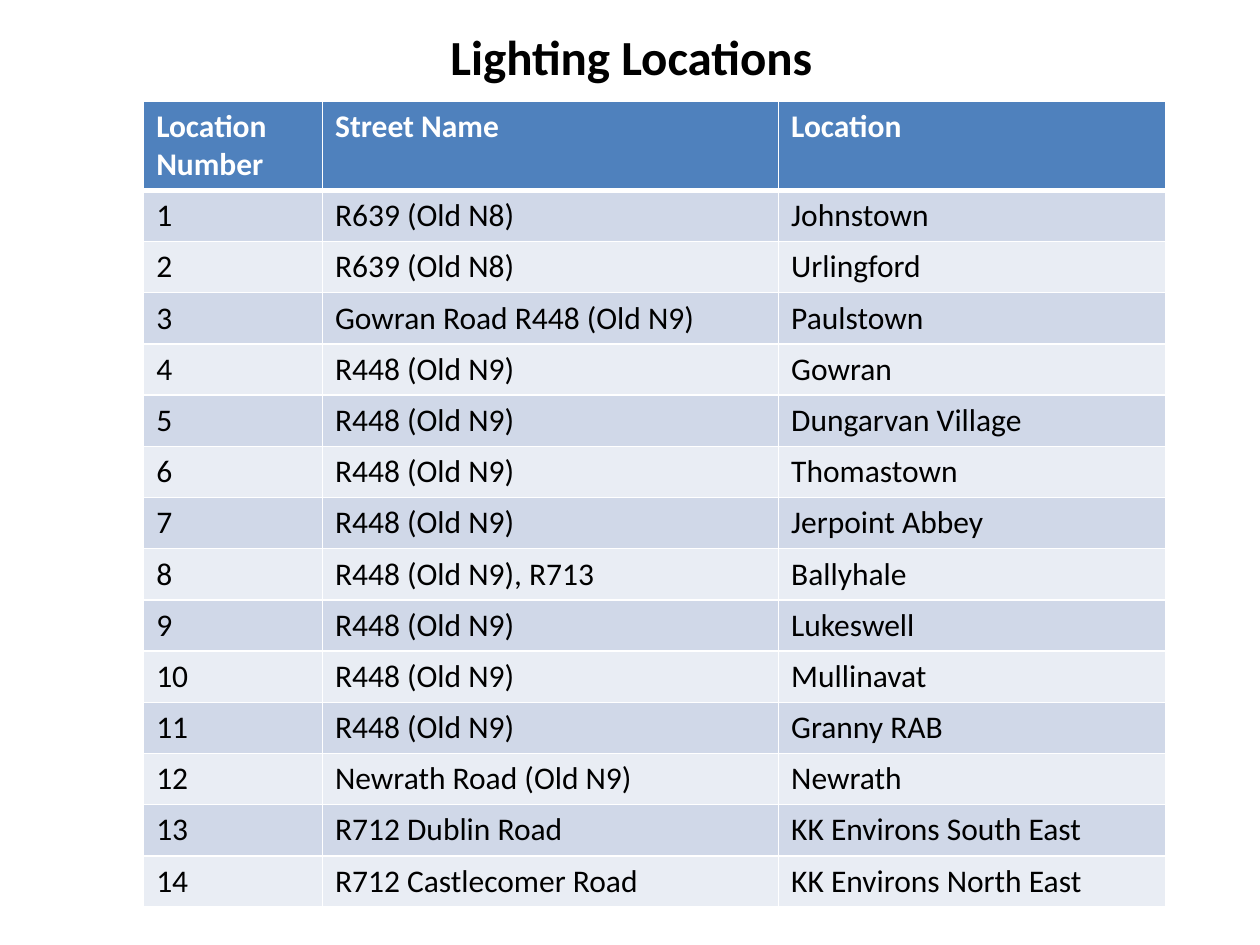
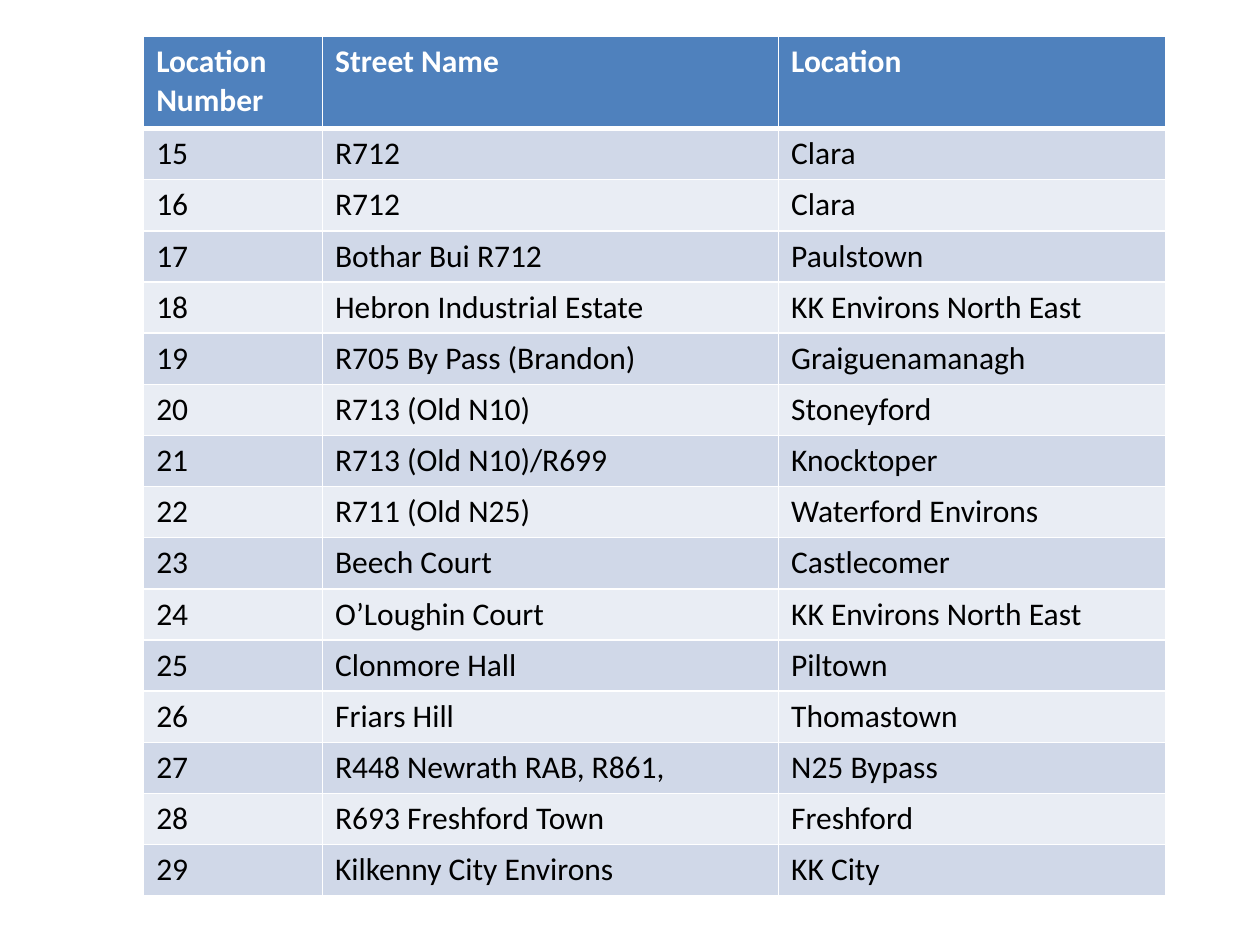
from lxml import etree
from pptx import Presentation
from pptx.dml.color import RGBColor
from pptx.enum import text
from pptx.oxml.ns import qn
from pptx.util import Inches, Pt

COLORS = {
    "header": "4F81BD",
    "odd": "D0D8E8",
    "even": "E9EDF4",
    "white": "FFFFFF",
    "black": "000000",
}
FONT = "Calibri"
HEADINGS = ("Location Number", "Street Name", "Location")
COLUMN_WIDTHS = (1.42, 3.62, 3.07)
TABLE_LEFT = 1.14
OLD_N9 = "R448 (Old N9)"

FIRST_LOCATIONS = [
    ("R639 (Old N8)", "Johnstown"),
    ("R639 (Old N8)", "Urlingford"),
    ("Gowran Road R448 (Old N9)", "Paulstown"),
    (OLD_N9, "Gowran"),
    (OLD_N9, "Dungarvan Village"),
    (OLD_N9, "Thomastown"),
    (OLD_N9, "Jerpoint Abbey"),
    ("R448 (Old N9), R713", "Ballyhale"),
    (OLD_N9, "Lukeswell"),
    (OLD_N9, "Mullinavat"),
    (OLD_N9, "Granny RAB"),
    ("Newrath Road (Old N9)", "Newrath"),
    ("R712 Dublin Road", "KK Environs South East"),
    ("R712 Castlecomer Road", "KK Environs North East"),
]
MORE_LOCATIONS = [
    ("R712", "Clara"),
    ("R712", "Clara"),
    ("Bothar Bui R712", "Paulstown"),
    ("Hebron Industrial Estate", "KK Environs North East"),
    ("R705 By Pass (Brandon)", "Graiguenamanagh"),
    ("R713 (Old N10)", "Stoneyford"),
    ("R713 (Old N10)/R699", "Knocktoper"),
    ("R711 (Old N25)", "Waterford Environs"),
    ("Beech Court", "Castlecomer"),
    ("O’Loughin Court", "KK Environs North East"),
    ("Clonmore Hall", "Piltown"),
    ("Friars Hill", "Thomastown"),
    ("R448 Newrath RAB, R861,", "N25 Bypass"),
    ("R693 Freshford Town", "Freshford"),
    ("Kilkenny City Environs", "KK City"),
]


def color(name):
    return RGBColor.from_string(COLORS[name])


def style_paragraph(para, size, color_name, bold):
    para.font.name = FONT
    para.font.size = Pt(size)
    para.font.bold = bold
    para.font.color.rgb = color(color_name)


def add_title(page, wording, left, top, width, height):
    title = page.shapes.title
    title.left, title.top = Inches(left), Inches(top)
    title.width, title.height = Inches(width), Inches(height)
    frame = title.text_frame
    frame.text = wording
    frame.vertical_anchor = text.MSO_ANCHOR.MIDDLE
    para = frame.paragraphs[0]
    para.alignment = text.PP_ALIGN.CENTER
    style_paragraph(para, 28, "black", True)


def set_borders(cell, row):
    points = {"L": 1, "R": 1, "T": 3 if row == 1 else 1, "B": 3 if row == 0 else 1}
    properties = cell._tc.get_or_add_tcPr()
    for side, width in points.items():
        line = etree.SubElement(properties, qn(f"a:ln{side}"), w=str(Pt(width)))
        fill = etree.SubElement(line, qn("a:solidFill"))
        etree.SubElement(fill, qn("a:srgbClr"), val=COLORS["white"])


def fill_cell(cell, row, wording):
    set_borders(cell, row)
    cell.fill.solid()
    is_header = row == 0
    shade = "header" if is_header else "odd" if row % 2 else "even"
    cell.fill.fore_color.rgb = color(shade)
    cell.text = wording
    ink = "white" if is_header else "black"
    style_paragraph(cell.text_frame.paragraphs[0], 18, ink, is_header)


def add_location_table(page, locations, first_number, top, height, header_height):
    numbered = [(str(number), *location)
                for number, location in enumerate(locations, first_number)]
    rows = [HEADINGS] + numbered
    table = page.shapes.add_table(
        len(rows), len(HEADINGS), Inches(TABLE_LEFT), Inches(top),
        Inches(sum(COLUMN_WIDTHS)), Inches(height)).table
    for column, width in zip(table.columns, COLUMN_WIDTHS):
        column.width = Inches(width)
    row_height = (height - header_height) / len(locations)
    for row, wordings in enumerate(rows):
        table.rows[row].height = Inches(row_height if row else header_height)
        for column, wording in enumerate(wordings):
            fill_cell(table.cell(row, column), row, wording)


def main():
    deck = Presentation()
    deck.slide_width, deck.slide_height = Inches(10), Inches(7.5)
    title_only, blank = deck.slide_layouts[5], deck.slide_layouts[6]

    page = deck.slides.add_slide(title_only)
    add_title(page, "Lighting Locations", 0.01, 0.09, 10, 0.71)
    add_location_table(page, FIRST_LOCATIONS, 1, 0.8, 6.38, 0.69)

    page = deck.slides.add_slide(blank)
    add_location_table(page, MORE_LOCATIONS, len(FIRST_LOCATIONS) + 1, 0.29, 6.82, 0.73)

    deck.save("out.pptx")


if __name__ == "__main__":
    main()
